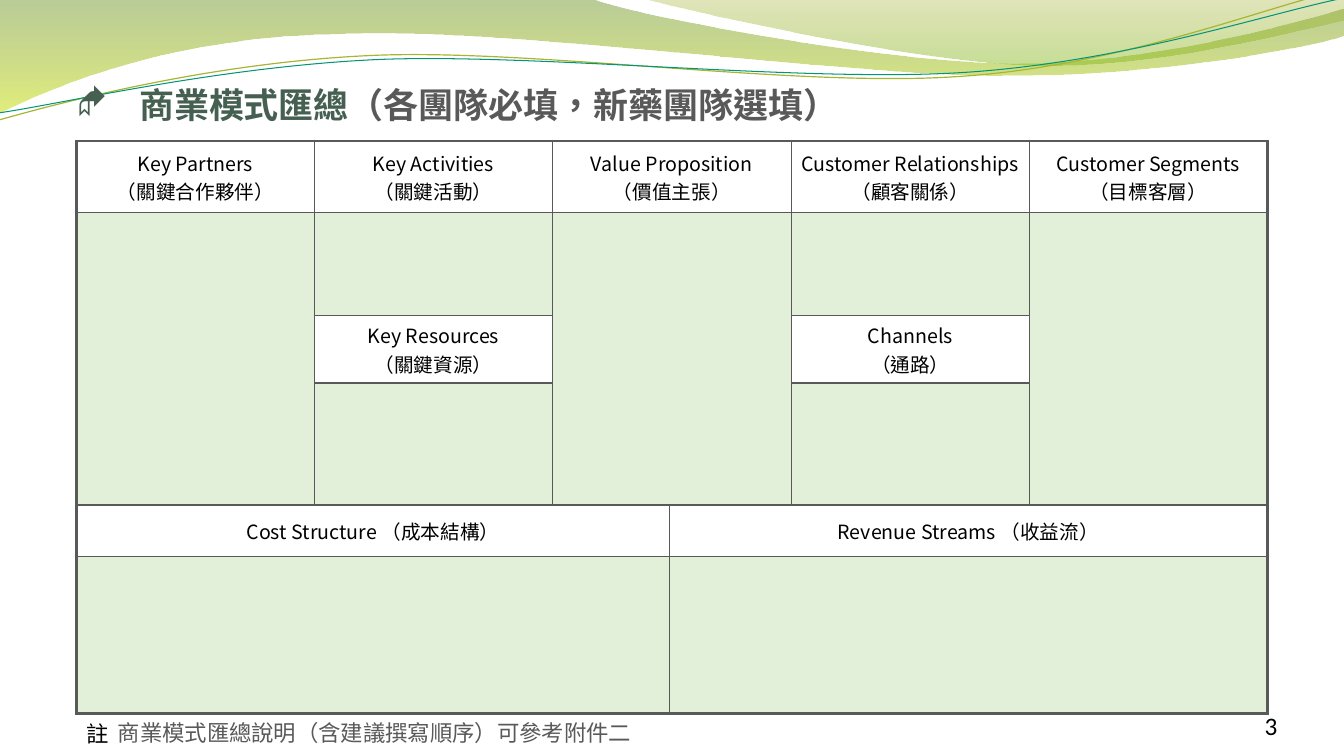
from lxml import etree
from pptx import Presentation
from pptx.dml.color import RGBColor
from pptx.enum.lang import MSO_LANGUAGE_ID
from pptx.enum.text import MSO_ANCHOR, MSO_AUTO_SIZE, PP_ALIGN
from pptx.oxml.ns import qn
from pptx.util import Pt

PX = 9144
FONT = "Noto Sans CJK TC"
NUMBER_FONT = "Calibri"
SYMBOL_FONT = "Wingdings"
TITLE_ONLY = 5
CHINESE = MSO_LANGUAGE_ID.TRADITIONAL_CHINESE
LEFT, CENTER, RIGHT = PP_ALIGN.LEFT, PP_ALIGN.CENTER, PP_ALIGN.RIGHT
TOP, MIDDLE, BOTTOM = MSO_ANCHOR.TOP, MSO_ANCHOR.MIDDLE, MSO_ANCHOR.BOTTOM

BLACK = RGBColor(0x00, 0x00, 0x00)
WHITE = RGBColor(0xFF, 0xFF, 0xFF)
GRAY = RGBColor(0x59, 0x59, 0x59)
DARK_GREEN = RGBColor(0x45, 0x5F, 0x51)
PALE_GREEN = RGBColor(0xE2, 0xF0, 0xD9)
OLIVE = RGBColor(0x66, 0x8F, 0x1B)
LIME = RGBColor(0xCA, 0xE0, 0x0E)
MOSS = RGBColor(0x99, 0xA7, 0x19)
LEAF = RGBColor(0x80, 0xB8, 0x14)
LINE_OLIVE = RGBColor(0xA8, 0xB5, 0x32)
LINE_TEAL = RGBColor(0x02, 0x96, 0x76)

BANDS = [
    ([(0, 0), [(587, -1)],
      [(634, 17), (884, 63), (1011, 63)],
      [(1137, 63), (1277, 26), (1333, 9)], [(1334, 36)],
      [(1311, 44), (1159, 76), (994, 75)],
      [(829, 75), (509, 28), (343, 34)],
      [(172, 36), (61, 83), (-2, 113)]],
     [(OLIVE, 45), (LIME, 55)]),
    ([(638, -1),
      [(679, 11), (909, 62), (1025, 65)],
      [(1140, 69), (1282, 32), (1333, 21)], [(1333, 0)]],
     [(MOSS, 30), (LEAF, 45)]),
]
STRANDS = [
    ([(-1, 119),
      [(63, 101), (210, 62), (369, 55)],
      [(527, 48), (789, 87), (949, 76)],
      [(1110, 66), (1251, 8), (1330, -10)]], LINE_OLIVE, 0.85),
    ([(-1, 112),
      [(62, 103), (218, 66), (377, 59)],
      [(537, 53), (796, 82), (955, 72)],
      [(1114, 62), (1255, 14), (1333, -2)]], LINE_TEAL, 0.75),
]

COLUMNS = [236, 236, 116, 121, 236, 236]
ROWS = [71, 102, 67, 121, 51, 156]
CELLS = [
    (0, 0, 1, 1, "Key Partners\n（關鍵合作夥伴）"),
    (0, 1, 1, 1, "Key Activities\n（關鍵活動）"),
    (0, 2, 1, 2, "Value Proposition\n（價值主張）"),
    (0, 4, 1, 1, "Customer Relationships\n（顧客關係）"),
    (0, 5, 1, 1, "Customer Segments\n（目標客層）"),
    (1, 0, 3, 1, ""), (1, 1, 1, 1, ""), (1, 2, 3, 2, ""),
    (1, 4, 1, 1, ""), (1, 5, 3, 1, ""),
    (2, 1, 1, 1, "Key Resources\n（關鍵資源）"),
    (2, 4, 1, 1, "Channels\n（通路）"),
    (3, 1, 1, 1, ""), (3, 4, 1, 1, ""),
    (4, 0, 1, 3, "Cost Structure （成本結構）"),
    (4, 3, 1, 3, "Revenue Streams （收益流）"),
    (5, 0, 1, 3, ""), (5, 3, 1, 3, ""),
]


def emu(box):
    return [value * PX for value in box]


def format_span(span, size, color, bold=False, name=FONT):
    font = span.font
    font.size, font.bold, font.name = Pt(size), bold, name
    font.color.rgb = color
    font.language_id = CHINESE
    east_asian = etree.Element(qn("a:ea"), typeface=name)
    font._element.find(qn("a:latin")).addnext(east_asian)


def set_bullet(para, mark, color, indent, name):
    properties = para._p.get_or_add_pPr()
    properties.set("marL", str(indent * PX))
    properties.set("indent", str(-indent * PX))
    bullet_color = etree.SubElement(properties, qn("a:buClr"))
    etree.SubElement(bullet_color, qn("a:srgbClr"), val=str(color))
    etree.SubElement(properties, qn("a:buFont"), typeface=name)
    etree.SubElement(properties, qn("a:buChar"), char=mark)


def set_frame(frame, anchor, insets):
    frame.word_wrap = True
    frame.auto_size = MSO_AUTO_SIZE.NONE
    frame.vertical_anchor = anchor
    (frame.margin_left, frame.margin_top,
     frame.margin_right, frame.margin_bottom) = emu(insets)


def add_route(page, route, origin, close):
    start, *segments = route
    points = [((origin[0] + x) * PX, (origin[1] + y) * PX)
              for x, y in [start, *sum(segments, [])]]
    builder = page.shapes.build_freeform(*points[0], scale=1.0)
    builder.add_line_segments(points[1:], close=close)
    shape = builder.convert_to_shape()
    shape.shadow.inherit = False
    lines = iter(list(shape.element.iter(qn("a:lnTo"))))
    for segment in segments:
        steps = [next(lines) for _ in segment]
        if len(steps) == 3:
            curve = etree.Element(qn("a:cubicBezTo"))
            steps[0].addprevious(curve)
            for step in steps:
                curve.append(step[0])
                step.getparent().remove(step)
    page.shapes.title.element.addprevious(shape.element)
    return shape


def add_waves(page, origin):
    for route, stops in BANDS:
        band = add_route(page, route, origin, True)
        band.line.fill.background()
        band.fill.gradient()
        band.fill.gradient_angle = 270
        for stop, (color, _) in zip(band.fill.gradient_stops, stops):
            stop.color.rgb = color
        tints = band.element.spPr.iter(qn("a:srgbClr"))
        for tint, (_, opacity) in zip(tints, stops):
            etree.SubElement(tint, qn("a:alpha"), val=str(opacity * 1000))
    for route, color, width in STRANDS:
        strand = add_route(page, route, origin, False)
        strand.fill.background()
        strand.line.color.rgb = color
        strand.line.width = Pt(width)


def add_title(page, box):
    title = page.shapes.title
    title.left, title.top, title.width, title.height = emu(box)
    set_frame(title.text_frame, BOTTOM, (0, 5, 0, 0))
    para = title.text_frame.paragraphs[0]
    set_bullet(para, "◆", DARK_GREEN, 62, SYMBOL_FONT)
    para.alignment = LEFT
    for text, color in (("商業模式匯總", DARK_GREEN),
                        ("（各團隊必填，新藥團隊選填）", GRAY)):
        span = para.add_run()
        span.text = text
        format_span(span, 25, color, bold=True)


def set_borders(cell, outer_edges):
    properties = cell._tc.get_or_add_tcPr()
    for index, (side, outer) in enumerate(zip("LRTB", outer_edges)):
        width = Pt(2.25 if outer else 1)
        border = etree.Element(qn("a:ln" + side), w=str(width))
        fill = etree.SubElement(border, qn("a:solidFill"))
        etree.SubElement(fill, qn("a:srgbClr"), val=str(GRAY))
        properties.insert(index, border)


def add_canvas(page, box):
    table = page.shapes.add_table(len(ROWS), len(COLUMNS), *emu(box)).table
    table.first_row = table.horz_banding = False
    for column, width in zip(table.columns, COLUMNS):
        column.width = width * PX
    for row, height in zip(table.rows, ROWS):
        row.height = height * PX
    for top, left, down, across, text in CELLS:
        cell = table.cell(top, left)
        bottom, right = top + down, left + across
        if down * across > 1:
            cell.merge(table.cell(bottom - 1, right - 1))
        cell.fill.solid()
        cell.fill.fore_color.rgb = WHITE if text else PALE_GREEN
        set_borders(cell, (left == 0, right == len(COLUMNS),
                           top == 0, bottom == len(ROWS)))
        cell.vertical_anchor = MIDDLE
        cell.margin_left = cell.margin_right = 7 * PX
        cell.margin_top = cell.margin_bottom = 4 * PX
        cell.text_frame.text = text
        for para in cell.text_frame.paragraphs:
            para.alignment = CENTER
            for span in para.runs:
                format_span(span, 14, BLACK)


def add_note(page, box):
    frame = page.shapes.add_textbox(*emu(box)).text_frame
    set_frame(frame, TOP, (10, 5, 10, 5))
    para = frame.paragraphs[0]
    para.text = "商業模式匯總說明（含建議撰寫順序）可參考附件二"
    set_bullet(para, "註", BLACK, 31, FONT)
    format_span(para.runs[0], 16, GRAY)


def add_page_number(page, box):
    frame = page.shapes.add_textbox(*emu(box)).text_frame
    set_frame(frame, BOTTOM, (0, 0, 0, 0))
    para = frame.paragraphs[0]
    para.text = "3"
    para.alignment = RIGHT
    format_span(para.runs[0], 18, BLACK, name=NUMBER_FONT)


def main():
    deck = Presentation()
    deck.slide_width, deck.slide_height = emu((1333, 750))
    page = deck.slides.add_slide(deck.slide_layouts[TITLE_ONLY])
    add_waves(page, (0, 0))
    add_title(page, (76, 0, 1200, 125))
    add_canvas(page, (76, 140, sum(COLUMNS), sum(ROWS)))
    add_note(page, (76, 709, 1167, 47))
    add_page_number(page, (1156, 695, 111, 40))
    deck.save("out.pptx")


if __name__ == "__main__":
    main()
